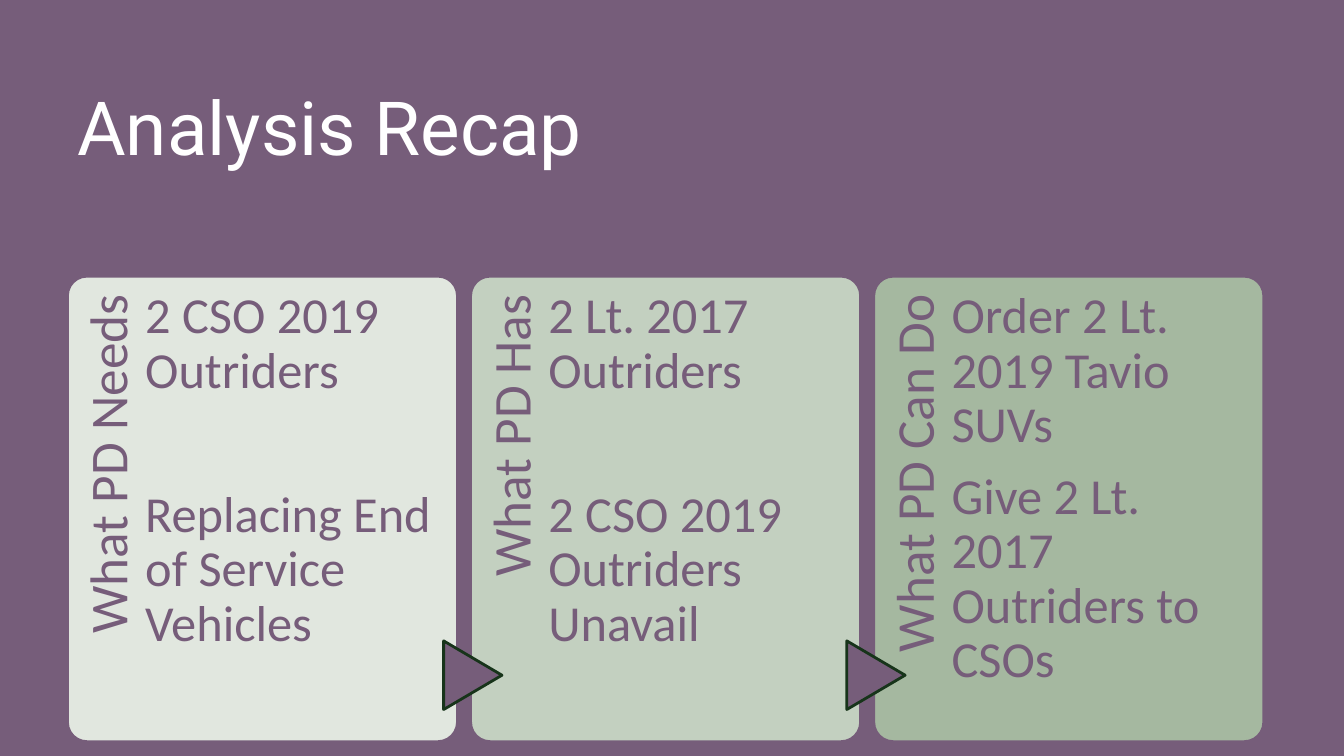
"""Builds the analysis recap slide with three linked panels."""
from pptx import Presentation
from pptx import util as u
from pptx.dml.color import RGBColor
from pptx.enum import shapes, text

COLORS = {"plum": "765D7A", "white": "FFFFFF", "edge": "17341A",
          "needs": "E1E7DF", "has": "C3D0C0", "can_do": "A5B8A0"}

PANELS = [
    ("needs", "What PD Needs", 64,
     ["2 CSO 2019 Outriders", "Replacing End of Service Vehicles"]),
    ("has", "What PD Has", 64,
     ["2 Lt. 2017 Outriders", "2 CSO 2019 Outriders Unavail"]),
    ("can_do", "What PD Can Do", 12,
     ["Order 2 Lt. 2019 Tavio SUVs", "Give 2 Lt. 2017 Outriders to CSOs"]),
]


class RecapSlide:
    """Holds the shared style and the slide being drawn."""

    def __init__(self, deck):
        self.slide = deck.slides.add_slide(deck.slide_layouts[6])
        self.paint(self.slide.background.fill, "plum")
        self.frame_format = {"word_wrap": True, "margin_left": 0, "margin_right": 0,
                             "margin_top": u.Cm(0.36), "margin_bottom": 0}
        self.line_format = {"line_spacing": 0.9}

    def paint(self, fill, color):
        """Fills with a named colour."""
        fill.solid()
        fill.fore_color.rgb = RGBColor.from_string(COLORS[color])

    def apply(self, target, settings):
        """Sets every attribute in a dict of format values."""
        for name, value in settings.items():
            setattr(target, name, value)

    def block(self, kind, box, fill, edge, rotation=0):
        """Adds a filled and outlined preset shape."""
        block = self.slide.shapes.add_shape(kind, *map(u.Cm, box))
        block.shadow.inherit = False
        block.rotation = rotation
        self.paint(block.fill, fill)
        self.paint(block.line.fill, edge)
        block.line.width = u.Pt(2)
        return block

    def words(self, lines, box, font, color="plum", frame=None, line=None, gap=0, rotation=0):
        """Adds a text box with one paragraph per line."""
        holder = self.slide.shapes.add_textbox(*map(u.Cm, box))
        holder.rotation = rotation
        self.apply(holder.text_frame, {**self.frame_format, **(frame or {})})
        holder.text_frame.text = "\n".join(lines)
        for index, paragraph in enumerate(holder.text_frame.paragraphs):
            self.apply(paragraph, {**self.line_format, **(line or {})})
            if index:
                paragraph.space_before = u.Pt(gap)
            self.apply(paragraph.font, font)
            paragraph.font.color.rgb = RGBColor.from_string(COLORS[color])

    def title(self, wording):
        """Adds the slide title."""
        self.words([wording], (1.7, 1.57, 30.48, 3.18),
                   {"name": "Roboto", "size": u.Pt(53.3)}, "white",
                   frame={"margin_left": u.Cm(0.25), "margin_top": u.Cm(0.13),
                          "margin_bottom": u.Cm(0.13),
                          "vertical_anchor": text.MSO_ANCHOR.MIDDLE},
                   line={"line_spacing": 1.0})

    def panel(self, left, color, heading, gap, points):
        """Adds a rounded panel with a sideways heading and its points."""
        card = self.block(shapes.MSO_SHAPE.ROUNDED_RECTANGLE,
                          (left, 6.96, 9.83, 11.73), color, "plum")
        card.adjustments[0] = 0.05
        self.words([heading], (left - 3.84, 10.8, 9.63, 1.96),
                   {"name": "Calibri", "size": u.Pt(38)},
                   frame={"margin_right": u.Cm(0.46)},
                   line={"alignment": text.PP_ALIGN.RIGHT}, rotation=270)
        self.words(points, (left + 1.96, 6.96, 7.32, 11.73),
                   {"name": "Calibri", "size": u.Pt(36)}, gap=gap)

    def arrow(self, left):
        """Adds the pointer leading into the panel at left."""
        self.block(shapes.MSO_SHAPE.FLOWCHART_EXTRACT,
                   (left - 0.81, 16.28, 1.73, 1.47), "plum", "edge", rotation=90)


def main():
    """Draws and saves the slide."""
    deck = Presentation()
    deck.slide_width, deck.slide_height = u.Cm(33.87), u.Cm(19.05)
    recap = RecapSlide(deck)
    recap.title("Analysis Recap")
    for index, panel in enumerate(PANELS):
        left = 1.7 + index * 10.16
        recap.panel(left, *panel)
        if index:
            recap.arrow(left)
    deck.save("out.pptx")


if __name__ == "__main__":
    main()
